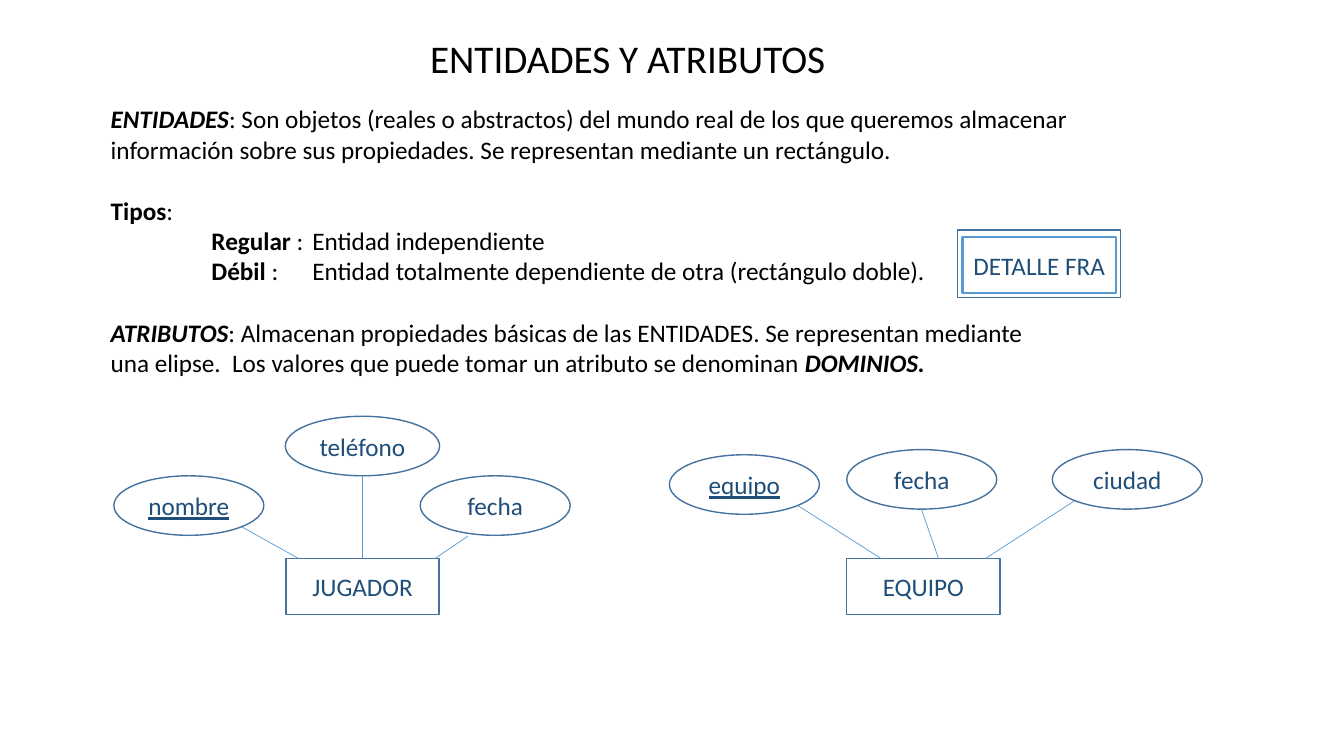
from lxml.etree import SubElement
from pptx import Presentation
from pptx.dml.color import RGBColor
from pptx.enum.shapes import MSO_CONNECTOR, MSO_SHAPE
from pptx.enum.text import MSO_ANCHOR, PP_ALIGN
from pptx.oxml.ns import qn
from pptx.util import Cm, Pt

BLACK, NAVY, OUTLINE, SKY = "000000", "1F4E79", "43739E", "5B9BD5"
BOLD, UNDERLINED = {"bold": True}, {"underline": True}
TERM = {"bold": True, "italic": True}
ENTITY_WIDTH, ENTITY_HEIGHT = 3.86, 1.42
ELLIPSE_WIDTH, ELLIPSE_HEIGHT = 3.78, 1.5
BLANK_LINE = 22

DEFINITION = [
    ([("ENTIDADES", TERM),
      (": Son objetos (reales o abstractos) del mundo real de los que queremos almacenar "
       "información sobre sus propiedades. Se representan mediante un rectángulo.", {})], 0, 0),
    ([("Tipos", BOLD), (":", {})], BLANK_LINE, 0),
    ([("Regular", BOLD), (" :\tEntidad independiente", {})], 0, 2.54),
    ([("Débil", BOLD),
      (" :\tEntidad totalmente dependiente de otra (rectángulo doble).", {})], 0, 2.54),
]
ATTRIBUTES = [
    ([("ATRIBUTOS", TERM),
      (": Almacenan propiedades básicas de las ENTIDADES. Se representan mediante una elipse.  "
       "Los valores que puede tomar un atributo se denominan ", {}),
      ("DOMINIOS.", TERM)], 0, 0),
]

# Per attribute: name, format, left and top in the diagram, width,
# line start in the ellipse, line end along the entity's top edge
PLAYER = [
    ("nombre", UNDERLINED, 0, 1.5, ELLIPSE_WIDTH, (3.23, 1.29), 0.31),
    ("teléfono", {}, 4.32, 0, 3.89, (1.95, 1.5), 1.93),
    ("fecha", {}, 7.72, 1.5, ELLIPSE_WIDTH, (1.2, 1.52), 3.76),
]
TEAM = [
    ("equipo", UNDERLINED, 0, 0.13, ELLIPSE_WIDTH, (3.22, 1.27), 0.86),
    ("fecha", {}, 4.47, 0, ELLIPSE_WIDTH, (1.88, 1.5), 2.31),
    ("ciudad", {}, 9.65, 0, ELLIPSE_WIDTH, (0.56, 1.29), 3.5),
]


def color(value):
    return RGBColor.from_string(value)


def add_span(para, text, size, ink, values):
    span = para.add_run()
    span.text = text
    span.font.color.rgb = color(ink)
    for name, value in ({"name": "Calibri", "size": Pt(size)} | values).items():
        setattr(span.font, name, value)


def add_text(page, box, paragraphs, size=18):
    """Each paragraph is its spans, the space before in points and the indent in cm."""
    frame = page.shapes.add_textbox(*map(Cm, box)).text_frame
    frame.word_wrap = True
    for index, (spans, space, indent) in enumerate(paragraphs):
        para = frame.add_paragraph() if index else frame.paragraphs[0]
        para.space_before = Pt(space)
        if indent:
            para._p.get_or_add_pPr().set("marL", str(Cm(indent)))
        for text, values in spans:
            add_span(para, text, size, BLACK, values)


def add_outline(page, kind, box, text="", values={}, line=OUTLINE, weight=1):
    shape = page.shapes.add_shape(kind, *map(Cm, box))
    shape.shadow.inherit = False
    shape.fill.background()
    shape.line.color.rgb = color(line)
    shape.line.width = Pt(weight)
    if text:
        frame = shape.text_frame
        settings = {"margin_left": 0, "margin_right": 0, "word_wrap": True,
                    "vertical_anchor": MSO_ANCHOR.MIDDLE}
        for name, value in settings.items():
            setattr(frame, name, value)
        frame.paragraphs[0].alignment = PP_ALIGN.CENTER
        add_span(frame.paragraphs[0], text, 18, NAVY, values)


def add_link(page, start, end):
    link = page.shapes.add_connector(MSO_CONNECTOR.STRAIGHT, *map(Cm, start + end))
    link.line.color.rgb = color(SKY)
    link.line.width = Pt(0.5)
    SubElement(link._element.spPr, qn("a:effectLst"))


def add_weak_entity(page, box, name):
    """Draws the double rectangle."""
    left, top, width, height = box
    inner = (left + 0.13, top + 0.17, width - 0.25, height - 0.28)
    add_outline(page, MSO_SHAPE.RECTANGLE, inner, name, line=SKY, weight=1.75)
    add_outline(page, MSO_SHAPE.RECTANGLE, box)


def add_diagram(page, box, entity, entity_offset, attributes):
    """Draws an entity at the foot of the box, linked to its attributes."""
    left, top, _, height = box
    entity_left = left + entity_offset
    entity_top = top + height - ENTITY_HEIGHT
    add_outline(page, MSO_SHAPE.RECTANGLE,
                (entity_left, entity_top, ENTITY_WIDTH, ENTITY_HEIGHT), entity)
    for name, values, across, down, width, (start_x, start_y), foot in attributes:
        x, y = left + across, top + down
        add_outline(page, MSO_SHAPE.OVAL, (x, y, width, ELLIPSE_HEIGHT), name, values)
        add_link(page, (x + start_x, y + start_y), (entity_left + foot, entity_top))


def main():
    deck = Presentation()
    deck.slide_width, deck.slide_height = Cm(33.87), Cm(19.05)
    page = deck.slides.add_slide(deck.slide_layouts[6])
    add_text(page, (10.59, 0.74, 11.58, 1.45), [([("ENTIDADES Y ATRIBUTOS", {})], 0, 0)], 28)
    add_text(page, (2.54, 2.49, 27.3, 4.88), DEFINITION)
    add_text(page, (2.54, 7.87, 23.67, 1.8), ATTRIBUTES)
    add_weak_entity(page, (24.13, 5.8, 4.11, 1.7), "DETALLE FRA")
    add_diagram(page, (2.87, 10.49, 11.5, 5), "JUGADOR", 4.34, PLAYER)
    add_diagram(page, (16.87, 11.33, 13.43, 4.16), "EQUIPO", 4.47, TEAM)
    deck.save("out.pptx")


if __name__ == "__main__":
    main()
